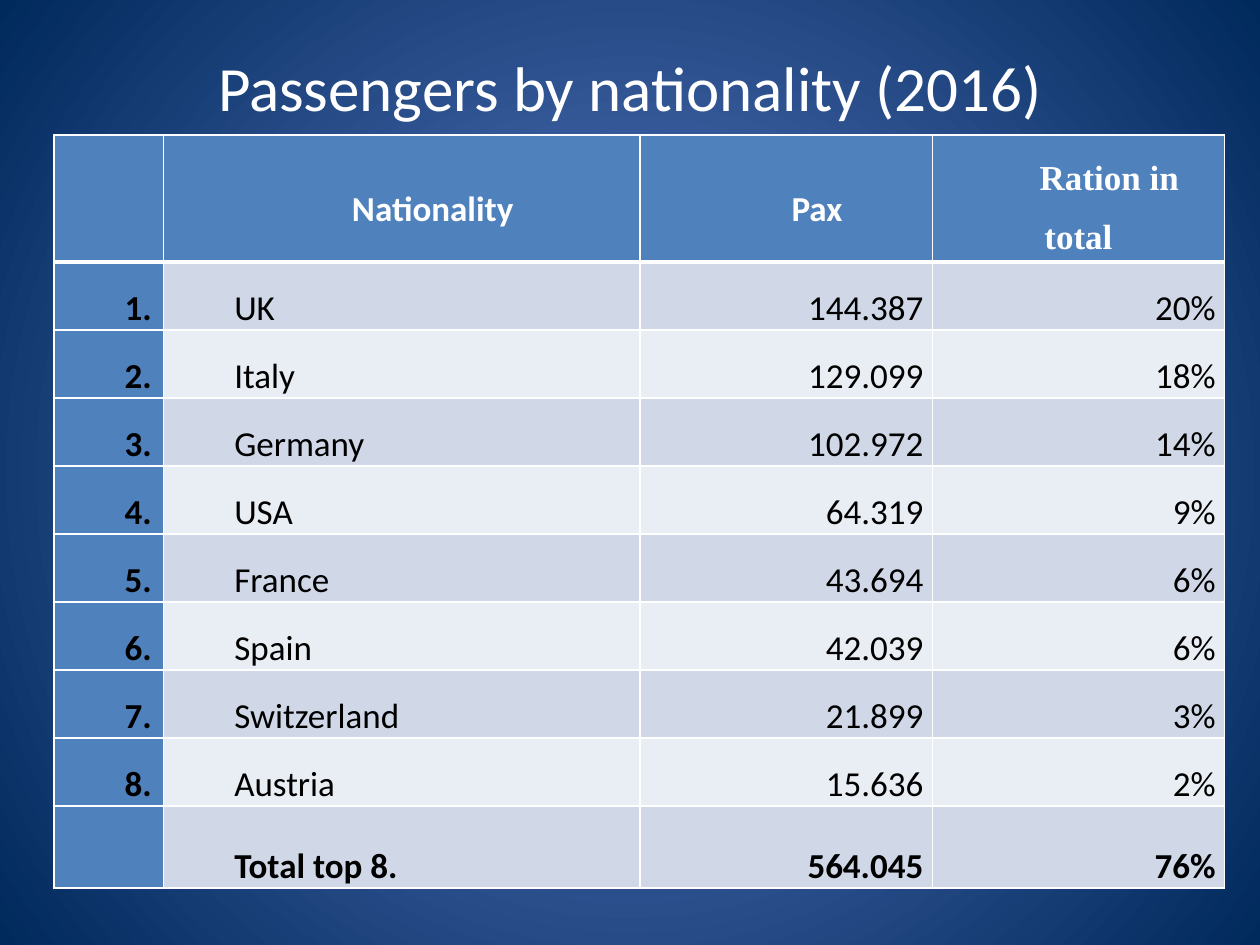
from lxml import etree
from pptx import Presentation
from pptx.dml.color import RGBColor as RGB
from pptx.enum.text import MSO_ANCHOR as Anchor, PP_ALIGN as Align
from pptx.oxml.ns import qn
from pptx.util import Inches, Pt

HUES = {
    "glow": "5E7CC5", "navy": "00295C", "white": "FFFFFF", "black": "000000",
    "head": "4F81BD", "odd": "D0D8E8", "even": "E9EDF4",
}
HEADS = ["", "Nationality", "Pax", "Ration in total"]
ROWS = [
    ["1.", "UK", "144.387", "20%"],
    ["2.", "Italy", "129.099", "18%"],
    ["3.", "Germany", "102.972", "14%"],
    ["4.", "USA", "64.319", "9%"],
    ["5.", "France", "43.694", "6%"],
    ["6.", "Spain", "42.039", "6%"],
    ["7.", "Switzerland", "21.899", "3%"],
    ["8.", "Austria", "15.636", "2%"],
    ["", "Total top 8.", "564.045", "76%"],
]
WIDTHS = [0.87, 3.78, 2.32, 2.32]
HEIGHTS = [1.01] + [0.54] * 8 + [0.65]


def hue(name):
    return RGB.from_string(HUES[name])


def style(par, size, color, bold=False, face="Calibri"):
    for run in par.runs:
        font = run.font
        font.size, font.bold, font.name = Pt(size), bold, face
        font.color.rgb = hue(color)


def add_glow(slide):
    """Fill the background with a gradient that spreads from the centre."""
    fill = slide.background.fill
    fill.gradient()
    for stop, name, place in zip(fill.gradient_stops, ["glow", "navy"], [0, 1]):
        stop.color.rgb = hue(name)
        stop.position = place
    grad = slide.element.find(".//" + qn("a:gradFill"))
    line = grad.find(qn("a:lin"))
    ring = etree.Element(qn("a:path"), path="circle")
    sides = dict.fromkeys("ltrb", "50000")
    etree.SubElement(ring, qn("a:fillToRect"), sides)
    grad.replace(line, ring)


def add_title(slide, text):
    box = slide.shapes.add_textbox(Inches(0.5), Inches(0.3), Inches(9), Inches(0.77))
    frame = box.text_frame
    frame.word_wrap = True
    frame.vertical_anchor = Anchor.MIDDLE
    frame.text = text
    par = frame.paragraphs[0]
    par.alignment = Align.CENTER
    style(par, 36, "white")


def add_edges(cell, row):
    """Draw white cell borders, with a thick one below the header."""
    props = cell._tc.get_or_add_tcPr()
    thick = {"T": row == 1, "B": row == 0}
    for side in "LRTB":
        width = Pt(3 if thick.get(side) else 1)
        line = etree.SubElement(props, qn(f"a:ln{side}"), w=str(width))
        solid = etree.SubElement(line, qn("a:solidFill"))
        etree.SubElement(solid, qn("a:srgbClr"), val=HUES["white"])


def fill_cell(cell, text, row, col):
    add_edges(cell, row)
    band = "odd" if row % 2 else "even"
    cell.fill.solid()
    cell.fill.fore_color.rgb = hue("head" if row == 0 or col == 0 else band)
    if not text:
        return
    cell.margin_left = cell.margin_right = Inches(0.07)
    cell.margin_top = cell.margin_bottom = 0
    cell.vertical_anchor = Anchor.BOTTOM if row else Anchor.MIDDLE
    cell.text_frame.text = text
    par = cell.text_frame.paragraphs[0]
    par.line_spacing = 1.5
    par.space_before = Pt(10)
    par._p.get_or_add_pPr().set("indent", str(Inches(0.49)))
    if row == 0:
        par.alignment = Align.CENTER
    else:
        par.alignment = Align.RIGHT if col > 1 else Align.LEFT
    bold = col == 0 or row in (0, len(ROWS))
    face = "Times New Roman" if row == 0 and col == 3 else "Calibri"
    style(par, 20, "black" if row else "white", bold, face)


def add_grid(slide):
    data = [HEADS] + ROWS
    table = slide.shapes.add_table(
        len(data), len(HEADS), Inches(0.43), Inches(1.07),
        Inches(sum(WIDTHS)), Inches(sum(HEIGHTS))).table
    table.horz_banding = False
    for col, width in zip(table.columns, WIDTHS):
        col.width = Inches(width)
    for row, height in zip(table.rows, HEIGHTS):
        row.height = Inches(height)
    for row, texts in enumerate(data):
        for col, text in enumerate(texts):
            fill_cell(table.cell(row, col), text, row, col)


def main():
    deck = Presentation()
    deck.slide_width, deck.slide_height = Inches(10), Inches(7.5)
    slide = deck.slides.add_slide(deck.slide_layouts[6])
    add_glow(slide)
    add_title(slide, "Passengers by nationality (2016)")
    add_grid(slide)
    deck.save("out.pptx")


if __name__ == "__main__":
    main()
